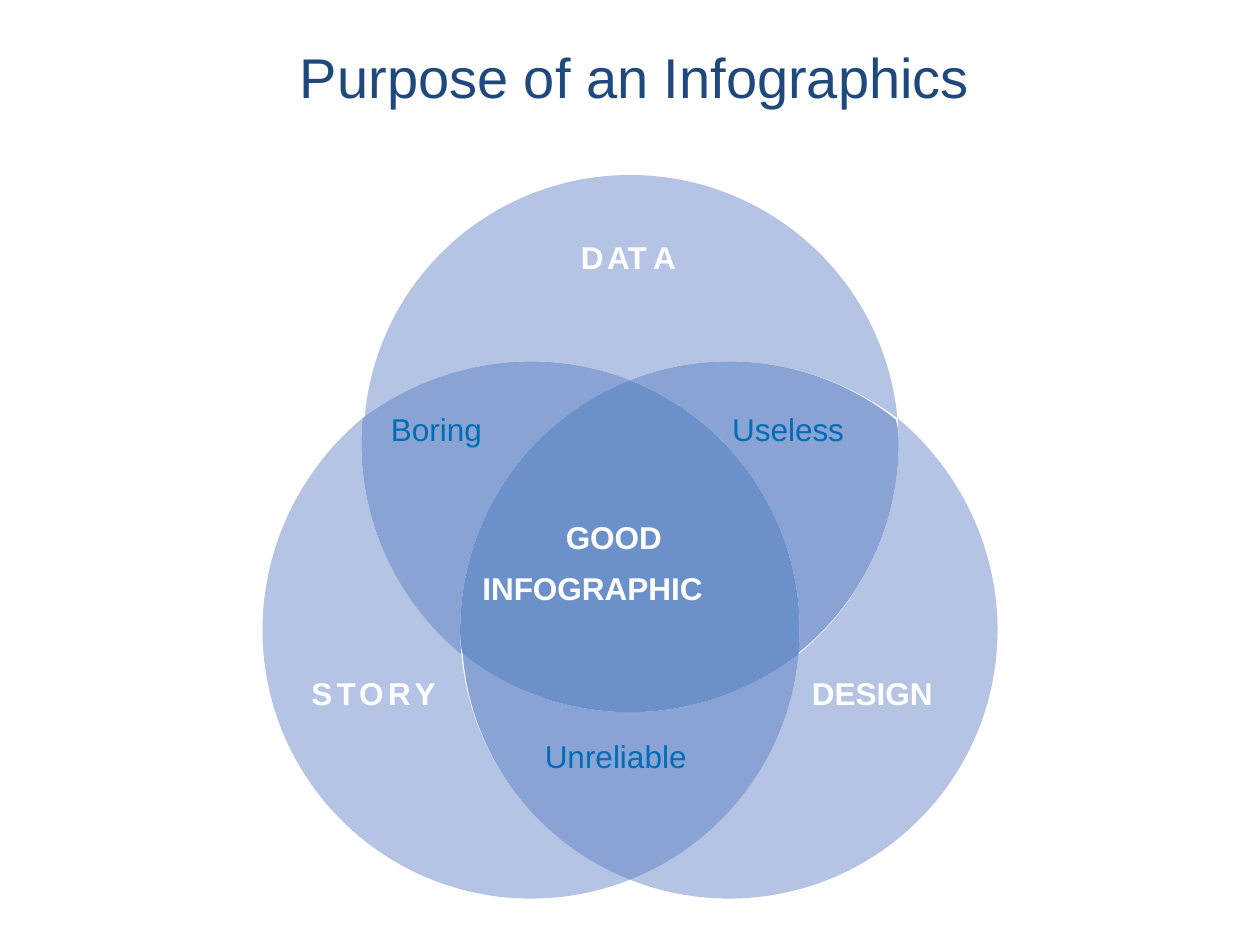
from math import atan2, cos, pi, sin, tan

from lxml.etree import Element, SubElement
from pptx import Presentation
from pptx.dml.color import RGBColor
from pptx.enum.text import MSO_ANCHOR as Anchor, MSO_AUTO_SIZE as AutoSize, PP_ALIGN as Align
from pptx.oxml.ns import qn
from pptx.util import Pt

LIGHT, MEDIUM, DARK = "B5C4E4", "89A3D4", "6C90CA"
WHITE, BLUE, NAVY = "FFFFFF", "026CB6", "1F497D"
RADIUS = 153.5


def color(hex_string):
    return RGBColor.from_string(hex_string)


def arc_curves(center, start, end):
    center_x, center_y = center
    first = atan2(start[1] - center_y, start[0] - center_x)
    last = atan2(end[1] - center_y, end[0] - center_x)
    last = first + (last - first + pi) % (2 * pi) - pi
    quadrants = [step * pi / 2 for step in range(-6, 7)]
    inner = [angle for angle in quadrants if min(first, last) < angle < max(first, last)]
    angles = sorted([first, last] + inner, reverse=last < first)
    curves = []
    for a, b in zip(angles, angles[1:]):
        reach = 4 / 3 * tan((b - a) / 4)
        offsets = [
            (cos(a) - reach * sin(a), sin(a) + reach * cos(a)),
            (cos(b) + reach * sin(b), sin(b) - reach * cos(b)),
            (cos(b), sin(b)),
        ]
        curves.append([(Pt(center_x + RADIUS * x), Pt(center_y + RADIUS * y)) for x, y in offsets])
    return curves


presentation = Presentation()
presentation.slide_width, presentation.slide_height = Pt(720), Pt(540)
slide = presentation.slides.add_slide(presentation.slide_layouts[5])

title = slide.shapes.title
title.left, title.top, title.width, title.height = Pt(144.7), Pt(20.9), Pt(436.3), Pt(85)
title.text_frame.text = "Purpose of an Infographics"
title.text_frame.auto_size = AutoSize.NONE
title.text_frame.vertical_anchor = Anchor.TOP
paragraph = title.text_frame.paragraphs[0]
paragraph.alignment = Align.CENTER
paragraph.font.name, paragraph.font.size = "Arial", Pt(32)
paragraph.font.color.rgb = color(NAVY)

data, story, design = (360, 253.5), (303.5, 360), (416.5, 360)
outer_left, outer_right, outer_bottom = (207.8, 239), (512.2, 239), (360, 502.7)
inner_left, inner_right, inner_top = (264.2, 373.9), (455.8, 373.9), (360, 217.3)

regions = [
    (LIGHT, [data, design, story], [outer_left, outer_right, inner_top]),
    (LIGHT, [story, design, data], [outer_left, outer_bottom, inner_left]),
    (MEDIUM, [story, design, data], [outer_left, inner_top, inner_left]),
    (LIGHT, [design, story, data], [outer_right, outer_bottom, inner_right]),
    (MEDIUM, [design, data, story], [inner_top, outer_right, inner_right]),
    (MEDIUM, [data, design, story], [inner_right, inner_left, outer_bottom]),
    (DARK, [story, data, design], [inner_top, inner_right, inner_left]),
]
for fill, centers, corners in regions:
    curves = []
    for center, start, end in zip(centers, corners, corners[1:] + corners[:1]):
        curves += arc_curves(center, start, end)
    ends = [curve[-1] for curve in curves]
    builder = slide.shapes.build_freeform(*ends[-1])
    builder.add_line_segments(ends, close=True)
    shape = builder.convert_to_shape()
    for line, curve in zip(list(shape._element.iter(qn("a:lnTo"))), curves):
        bezier = Element(qn("a:cubicBezTo"))
        for x, y in curve:
            SubElement(bezier, qn("a:pt"), x=str(x - shape.left), y=str(y - shape.top))
        line.getparent().replace(line, bezier)
    shape.shadow.inherit = False
    shape.fill.solid()
    shape.fill.fore_color.rgb = color(fill)
    shape.line.fill.background()

labels = [
    ("D", 332, 136.3, 15, WHITE),
    ("AT", 347, 136.3, 26.5, WHITE),
    ("A", 373.2, 136.3, 15, WHITE),
    ("S", 178, 385.2, 14.5, WHITE),
    ("T", 192.3, 385.2, 13, WHITE),
    ("O", 205.2, 385.2, 16.5, WHITE),
    ("R", 221.8, 385.2, 15, WHITE),
    ("Y", 236.9, 385.2, 14.5, WHITE),
    ("DESIGN", 464, 385.2, 81, WHITE),
    ("GOOD", 323.3, 296, 65, WHITE),
    ("INFOGRAPHIC", 275.6, 325.2, 148, WHITE),
    ("Unreliable", 311.3, 421.2, 96, BLUE),
    ("Boring", 223.4, 234.2, 61, BLUE),
    ("Useless", 418.3, 234.2, 76, BLUE),
]
for text, left, top, width, text_color in labels:
    frame = slide.shapes.add_textbox(Pt(left), Pt(top), Pt(width), Pt(19.5)).text_frame
    frame.margin_left = frame.margin_top = frame.margin_right = frame.margin_bottom = 0
    frame.word_wrap = False
    frame.text = text
    paragraph = frame.paragraphs[0]
    paragraph.font.name, paragraph.font.size = "Arial", Pt(18)
    paragraph.font.bold = text_color == WHITE
    paragraph.font.color.rgb = color(text_color)

presentation.save("out.pptx")
